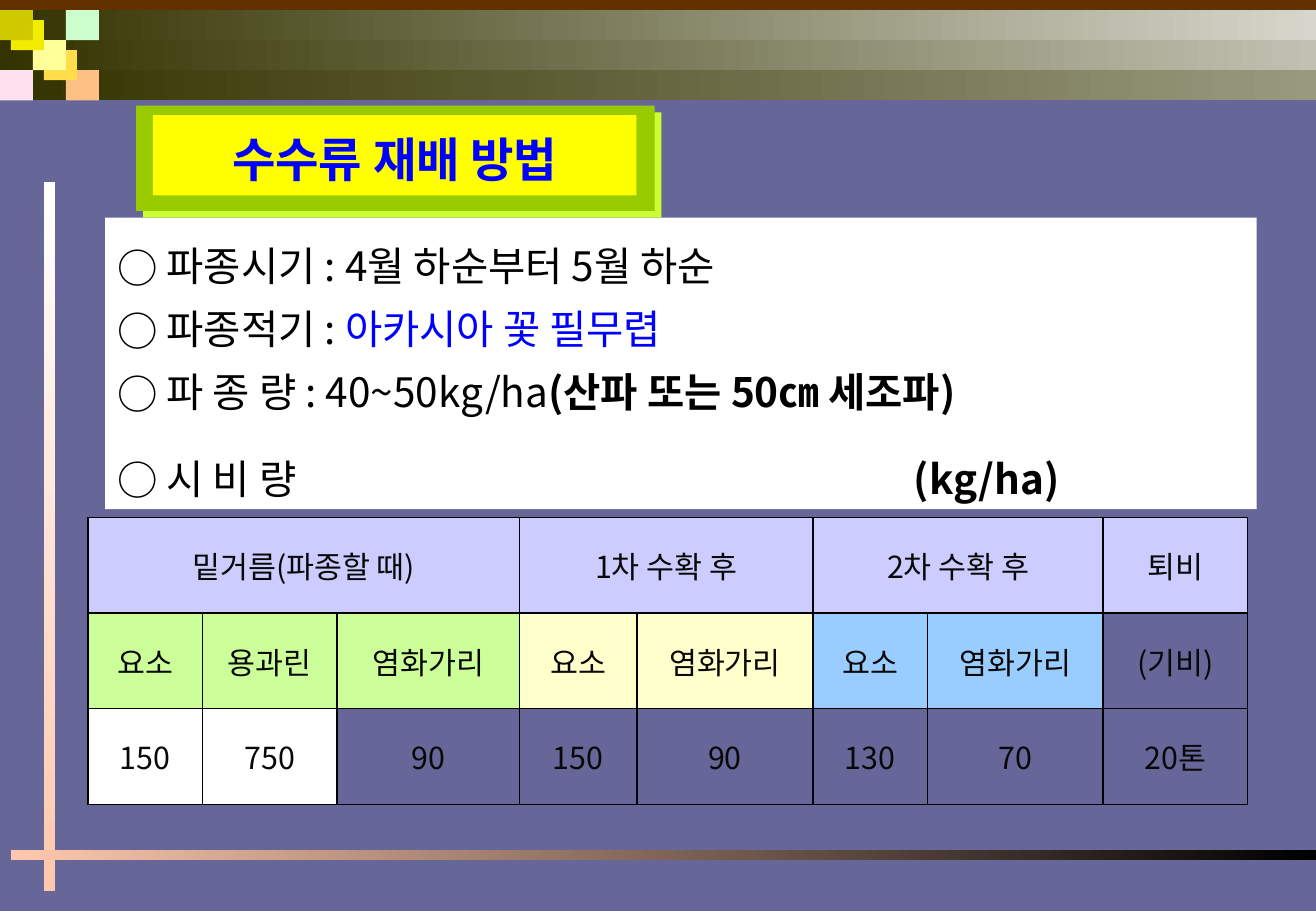
from dataclasses import dataclass
from lxml.etree import SubElement
from pptx import Presentation
from pptx.dml.color import RGBColor
from pptx.enum.shapes import MSO_SHAPE
from pptx.enum.text import MSO_ANCHOR, PP_ALIGN
from pptx.oxml.ns import qn
from pptx.util import Cm, Pt

WIDTH, HEIGHT = 27.52, 19.05


@dataclass(frozen=True)
class Theme:
    font: str = "Noto Sans CJK KR"
    title_size: int = 28
    body_size: int = 24
    table_size: int = 18
    background: str = "666699"
    black: str = "000000"
    white: str = "FFFFFF"
    blue: str = "0000FF"
    cell_text: str = "080808"
    top_strip: str = "623100"
    band_start: str = "333300"
    band_ends: tuple = ("D6D6CC", "C1C1B2", "99997F")
    bar: str = "FFC8AD"
    title_frame: str = "99CC00"
    title_shadow: str = "CCFF33"
    title_fill: str = "FFFF00"
    header: str = "CCCCFF"
    base: str = "CCFF99"
    first_cut: str = "FFFFCC"
    second_cut: str = "99CCFF"


class SlideBuilder:
    def __init__(self, slide, theme):
        self.slide, self.theme = slide, theme
        slide.background.fill.solid()
        slide.background.fill.fore_color.rgb = RGBColor.from_string(theme.background)

    def box(self, x, y, w, h, *colors, angle=0):
        """One colour gives a plain fill, two give a gradient."""
        sp = self.slide.shapes.add_shape(MSO_SHAPE.RECTANGLE, Cm(x), Cm(y), Cm(w), Cm(h))
        sp.shadow.inherit = False
        sp.line.fill.background()
        if len(colors) == 1:
            sp.fill.solid()
            sp.fill.fore_color.rgb = RGBColor.from_string(colors[0])
        else:
            sp.fill.gradient()
            sp.fill.gradient_angle = angle
            for stop, color in zip(sp.fill.gradient_stops, colors):
                stop.color.rgb = RGBColor.from_string(color)
        return sp

    def hard_shadow(self, sp, color, distance):
        effects = sp._element.spPr.find(qn("a:effectLst"))
        shadow = SubElement(effects, qn("a:outerShdw"), blurRad="0", dist=str(Pt(distance)),
                            dir=str(45 * 60000), algn="ctr", rotWithShape="0")
        SubElement(shadow, qn("a:srgbClr"), val=color)

    def style_run(self, r, size, color, bold=False):
        r.font.size, r.font.bold, r.font.name = Pt(size), bold, self.theme.font
        r.font.color.rgb = RGBColor.from_string(color)
        SubElement(r._r.get_or_add_rPr(), qn("a:ea"), typeface=self.theme.font)

    def centred(self, tf, text, size, color, bold=False):
        tf.text = text
        p = tf.paragraphs[0]
        p.alignment = PP_ALIGN.CENTER
        self.style_run(p.runs[0], size, color, bold)
        return p

    def bullet_list(self, sp, items, tab):
        """Each item is (space before, [(text, colour, bold), ...])."""
        tf = sp.text_frame
        tf.word_wrap, tf.vertical_anchor = True, MSO_ANCHOR.TOP
        tf.margin_top = Cm(0.2)
        for i, (space, runs) in enumerate(items):
            p = tf.add_paragraph() if i else tf.paragraphs[0]
            p.alignment, p.line_spacing = PP_ALIGN.LEFT, Pt(37.3)
            if space:
                p.space_before = Pt(space)
            pPr = p._p.get_or_add_pPr()
            SubElement(pPr, qn("a:buFont"), typeface=self.theme.font)
            SubElement(pPr, qn("a:buChar"), char="○")
            tabs = SubElement(pPr, qn("a:tabLst"))
            SubElement(tabs, qn("a:tab"), pos=str(Cm(tab)), algn="l")
            for text, color, bold in runs:
                r = p.add_run()
                r.text = text
                self.style_run(r, self.theme.body_size, color, bold)

    def cell_border(self, cell):
        tcPr = cell._tc.get_or_add_tcPr()
        for i, side in enumerate(("lnL", "lnR", "lnT", "lnB")):
            ln = tcPr.makeelement(qn(f"a:{side}"), {"w": str(Pt(1))})
            SubElement(SubElement(ln, qn("a:solidFill")), qn("a:srgbClr"), val=self.theme.black)
            tcPr.insert(i, ln)

    def table(self, x, y, widths, row_height, rows, fills, spans):
        shape = self.slide.shapes.add_table(len(rows), len(widths), Cm(x), Cm(y),
                                            Cm(sum(widths)), Cm(row_height * len(rows)))
        table = shape.table
        table.first_row = table.horz_banding = False
        for column, width in zip(table.columns, widths):
            column.width = Cm(width)
        for row in table.rows:
            row.height = Cm(row_height)
        for first, last in spans:
            table.cell(0, first).merge(table.cell(0, last))
        for i, (texts, colors) in enumerate(zip(rows, fills)):
            for j, (text, color) in enumerate(zip(texts, colors)):
                cell = table.cell(i, j)
                cell.vertical_anchor = MSO_ANCHOR.MIDDLE
                if color:
                    cell.fill.solid()
                    cell.fill.fore_color.rgb = RGBColor.from_string(color)
                else:
                    cell.fill.background()
                self.cell_border(cell)
                if text:
                    self.centred(cell.text_frame, text, self.theme.table_size,
                                 self.theme.cell_text)


def main():
    prs = Presentation()
    prs.slide_width, prs.slide_height = Cm(WIDTH), Cm(HEIGHT)
    t = Theme()
    s = SlideBuilder(prs.slides.add_slide(prs.slide_layouts[6]), t)

    # Top bands and tiles; tiles sit on a grid of thirds of a tile
    step_x, step_y = 0.23, 0.21
    tile_w, tile_h = 3 * step_x, 3 * step_y
    for i, end in enumerate(t.band_ends):
        s.box(0, step_y + i * tile_h, WIDTH, tile_h, t.band_start, end)
    tiles = [(6, 0, "CCFFCC"), (6, 6, "FFC183"), (4, 4, "FFDD4B"), (3, 3, "FFFF99"),
             (1, 1, "F2EC00"), (0, 0, "CFCA00"), (0, 6, "FFE1F0")]
    for col, row, color in tiles:
        s.box(col * step_x, (row + 1) * step_y, tile_w, tile_h, color)
    s.box(0, 0, WIDTH, step_y, t.top_strip)

    # Crossing bars
    s.box(0.92, 3.81, 0.23, 14.82, t.white, t.bar, angle=270)
    s.box(0.23, 17.78, 27.29, 0.21, t.bar, t.black)

    # Sowing notes
    notes = s.box(2.2, 4.55, 24.08, 6.1, t.white)
    s.bullet_list(notes, [
        (0, [(" 파종시기 : 4월 하순부터 5월 하순", t.black, False)]),
        (0, [(" 파종적기 : ", t.black, False), ("아카시아 꽃 필무렵", t.blue, False)]),
        (0, [(" 파 종 량 : 40~50kg/ha", t.black, False),
             ("(산파 또는 50㎝ 세조파)", t.black, True)]),
        (14, [(" 시 비 량\t", t.black, False), ("(kg/ha)", t.black, True)]),
    ], tab=16.66)

    # Fertiliser table
    rows = [
        ["밑거름(파종할 때)", "", "", "1차 수확 후", "", "2차 수확 후", "", "퇴비"],
        ["요소", "용과린", "염화가리", "요소", "염화가리", "요소", "염화가리", "(기비)"],
        ["150", "750", "90", "150", "90", "130", "70", "20톤"],
    ]
    fills = [
        [t.header] * 8,
        [t.base] * 3 + [t.first_cut] * 2 + [t.second_cut] * 2 + [None],
        [t.white] * 2 + [None] * 6,
    ]
    s.table(1.84, 10.82, [2.39, 2.82, 3.81, 2.46, 3.68, 2.39, 3.68, 3.02], 2,
            rows, fills, [(0, 2), (3, 4), (5, 6)])

    # Title plate
    frame = s.box(2.85, 2.21, 10.84, 2.2, t.title_frame)
    s.hard_shadow(frame, t.title_shadow, 5.7)
    title = s.box(3.2, 2.41, 10.11, 1.68, t.title_fill)
    title.text_frame.vertical_anchor = MSO_ANCHOR.MIDDLE
    p = s.centred(title.text_frame, "수수류 재배 방법", t.title_size, t.blue, True)
    p.line_spacing = 1.1

    prs.save("out.pptx")


if __name__ == "__main__":
    main()
